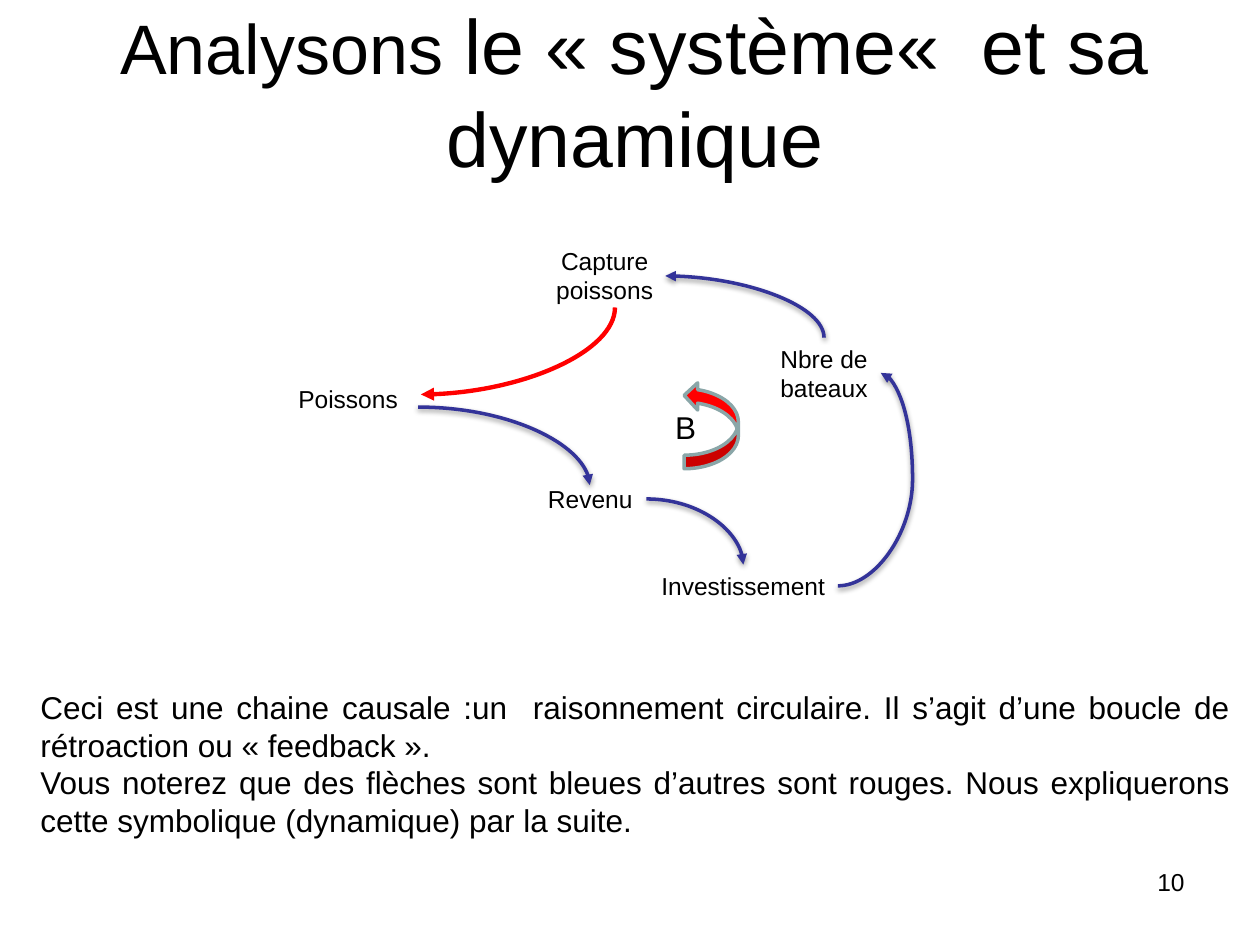
import pptx
import pptx.util
import pptx.dml.color
import pptx.enum.shapes
import pptx.enum.text
import pptx.oxml
import pptx.oxml.ns

Pt = pptx.util.Pt
qn = pptx.oxml.ns.qn
ALIGN = pptx.enum.text.PP_ALIGN
ANCHOR = pptx.enum.text.MSO_ANCHOR
SHAPE = pptx.enum.shapes.MSO_SHAPE
CURVE = pptx.enum.shapes.MSO_CONNECTOR.CURVE
NS = 'xmlns:a="http://schemas.openxmlformats.org/drawingml/2006/main"'
BLACK, RED, BLUE, GREY = "000000", "FF0000", "333399", "8AA6A8"
SHADOW = (
    '<a:outerShdw blurRad="40000" dist="20000" dir="5400000" rotWithShape="0">'
    '<a:srgbClr val="000000"><a:alpha val="38000"/></a:srgbClr></a:outerShdw>'
)


def color(code):
    return pptx.dml.color.RGBColor.from_string(code)


def add_xml(parent, text):
    parent.append(pptx.oxml.parse_xml(text))


def add_text(slide, box, paras, size, align=ALIGN.LEFT, wrap=True, anchor=ANCHOR.TOP):
    """Each paragraph is a list of (text, size) runs or a plain string."""
    frame = slide.shapes.add_textbox(*map(Pt, box)).text_frame
    frame.word_wrap = wrap
    frame.vertical_anchor = anchor
    for i, runs in enumerate(paras):
        para = frame.add_paragraph() if i else frame.paragraphs[0]
        para.alignment = align
        para.font.name = "Arial"
        para.font.size = Pt(size)
        para.font.color.rgb = color(BLACK)
        for text, own in [(runs, None)] if isinstance(runs, str) else runs:
            run = para.add_run()
            run.text = text
            if own:
                run.font.size = Pt(own)


def add_curve(slide, start, end, code, width, upright=False, bulge=None):
    """Curved arrow; upright ones leave their start vertically."""
    (x1, y1), (x2, y2) = start, end
    sign = 1 if y2 > y1 else -1
    if upright:  # turn the frame a quarter about its centre
        midx, midy = (x1 + x2) / 2, (y1 + y2) / 2
        offx, offy = sign * (y2 - y1) / 2, sign * (x2 - x1) / 2
        x1, y1, x2, y2 = midx - offx, midy + offy, midx + offx, midy - offy
    link = slide.shapes.add_connector(CURVE, *map(Pt, (x1, y1, x2, y2)))
    link.line.color.rgb = color(code)
    link.line.width = Pt(width)
    props = link._element.spPr
    if upright:
        props.find(qn("a:xfrm")).set("rot", str(sign * 5400000 % 21600000))
    geom = props.find(qn("a:prstGeom"))
    if bulge:
        add_xml(geom.find(qn("a:avLst")),
                f'<a:gd {NS} name="adj1" fmla="val {round(bulge * 100000)}"/>')
    else:
        geom.set("prst", "curvedConnector2")
    add_xml(props.find(qn("a:ln")), f'<a:tailEnd {NS} type="triangle"/>')
    glow = SHADOW if code == BLUE else ""
    add_xml(props, f"<a:effectLst {NS}>{glow}</a:effectLst>")


def add_title(slide, box):
    runs = [("Analysons", 40), (" le « système«  et sa dynamique", 44)]
    add_text(slide, box, [runs], 44, ALIGN.CENTER, anchor=ANCHOR.MIDDLE)


def add_loop(slide, left, top):
    def at(x, y):
        return left + x, top + y

    # Stages of the causal chain
    stages = [
        (["Poissons"], 3.4, 80, 72),
        (["Capture", "poissons"], 150.3, 0.8, 70.5),
        (["Revenu"], 146, 136.9, 63.4),
        (["Nbre de", "bateaux"], 278.5, 57, 64.8),
        (["Investissement"], 210.8, 186.6, 108.7),
    ]
    for lines, x, y, wide in stages:
        high = 7.5 + 16.8 * len(lines)
        align = ALIGN.CENTER if len(lines) > 1 else ALIGN.LEFT
        add_text(slide, (*at(x, y), wide, high), lines, 14, align, wrap=False)

    # Causal links
    add_curve(slide, at(191.4, 39.7), at(80.5, 89.4), RED, 2.5, upright=True)
    add_curve(slide, at(310.9, 57), at(220.2, 21.7), BLUE, 2, upright=True)
    add_curve(slide, at(79, 96.6), at(177, 141.2), BLUE, 2)
    add_curve(slide, at(209.4, 149.1), at(264.8, 186.6), BLUE, 2)
    add_curve(slide, at(318.8, 198.8), at(343.3, 77.1), BLUE, 2, bulge=1.744)

    # Balancing loop sign
    sign = slide.shapes.add_shape(
        SHAPE.CURVED_UP_ARROW, *map(Pt, (*at(221.6, 91.5), 49.7, 31)))
    sign.rotation = 270
    sign.shadow.inherit = False
    sign.fill.solid()
    sign.fill.fore_color.rgb = color(RED)
    sign.line.color.rgb = color(GREY)
    sign.line.width = Pt(2)
    add_text(slide, (*at(218.7, 93.7), 26.6, 29), ["B"], 18, wrap=False)


def add_notice(slide, box):
    paras = [
        "Ceci est une chaine causale :un  raisonnement circulaire. "
        "Il s’agit d’une boucle de rétroaction ou « feedback ».",
        "Vous noterez que des flèches sont bleues d’autres sont rouges. "
        "Nous expliquerons cette symbolique (dynamique) par la suite.",
    ]
    add_text(slide, box, paras, 18, ALIGN.JUSTIFY)


def main():
    deck = pptx.Presentation()
    deck.slide_width, deck.slide_height = Pt(720), Pt(540)
    slide = deck.slides.add_slide(deck.slide_layouts[6])
    add_title(slide, (38.9, 6.5, 648, 90))
    add_loop(slide, 160, 136)
    add_notice(slide, (16, 389.5, 694, 94.5))
    # Page number
    add_text(slide, (516, 492, 168, 37.5), ["10"], 14, ALIGN.RIGHT)
    deck.save("out.pptx")


if __name__ == "__main__":
    main()
